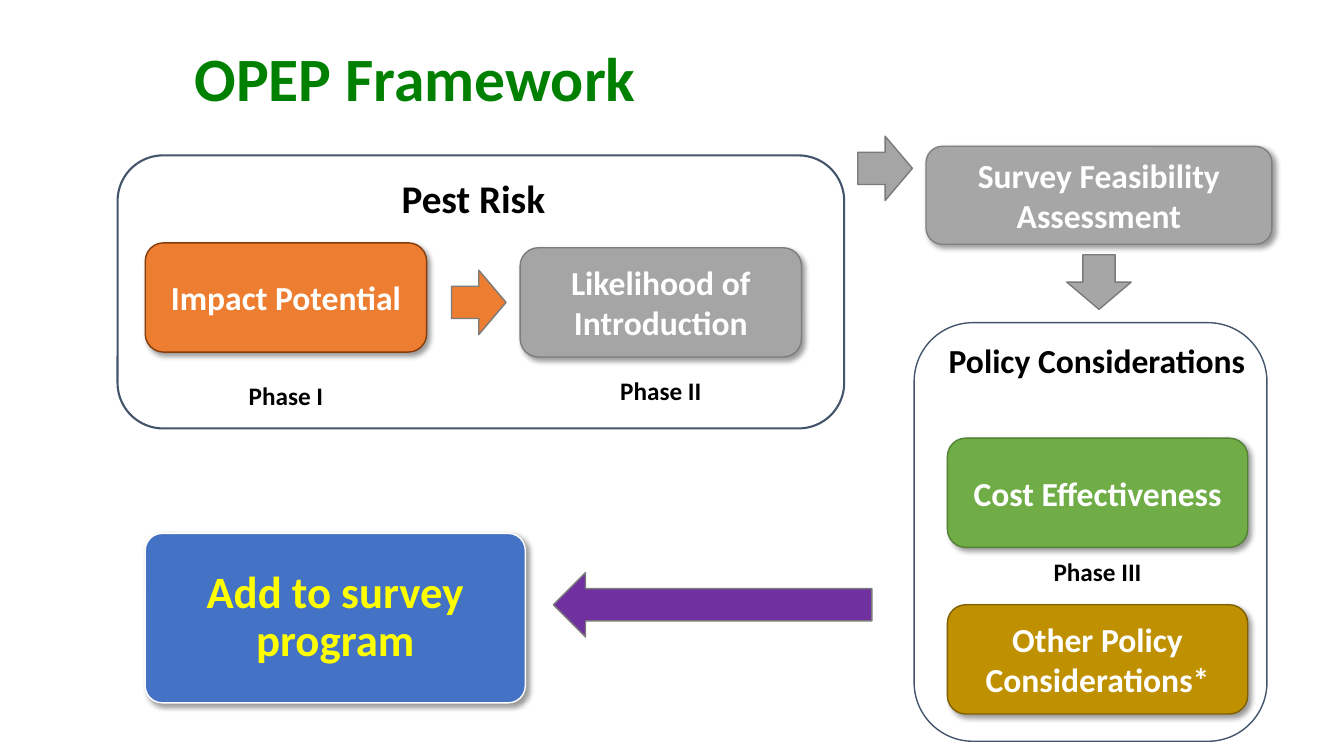
from dataclasses import dataclass

from lxml.etree import SubElement
from pptx import Presentation
from pptx.dml.color import RGBColor
from pptx.enum.shapes import MSO_SHAPE as Shape
from pptx.enum.text import MSO_ANCHOR as Anchor, PP_ALIGN as Align
from pptx.oxml.ns import qn
from pptx.util import Pt


@dataclass(frozen=True)
class Theme:
    font: str = "Calibri"
    title_size: int = 44
    result_size: int = 32
    heading_size: int = 28
    box_size: int = 24
    phase_size: int = 18
    title: str = "008000"
    text: str = "000000"
    light: str = "FFFFFF"
    highlight: str = "FFFF00"
    panel_line: str = "44546A"
    arrow_line: str = "7A7A7A"
    orange: str = "ED7D31"
    orange_line: str = "843C0B"
    gray: str = "A5A5A5"
    gray_line: str = "7C7C7C"
    survey_gray: str = "A6A6A6"
    survey_line: str = "808080"
    green: str = "70AD47"
    green_line: str = "548235"
    gold: str = "BF9000"
    gold_line: str = "806000"
    blue: str = "4472C4"
    purple: str = "7030A0"


THEME = Theme()

TITLE = ("OPEP Framework", (131.75, 13, 684, 90))

# Frame (left, top, width, height), line width
PANELS = [
    ((84, 111, 519, 195), 1.5),
    ((653, 230.5, 252, 299), 1),
]

# Text, frame, size
HEADINGS = [
    ("Pest Risk", (103.75, 121, 468.75, 41), THEME.heading_size),
    ("Policy Considerations", (668, 239, 231, 65.5), THEME.box_size),
]

# Text, frame, fill, line, phase label, gap above the label
BOXES = [
    ("Survey Feasibility\nAssessment", (661.5, 104.5, 247, 70),
     THEME.survey_gray, THEME.survey_line, None, 0),
    ("Impact Potential", (103.75, 173.5, 201, 78),
     THEME.orange, THEME.orange_line, "Phase I", 16.5),
    ("Likelihood of Introduction", (371.5, 177, 201, 78),
     THEME.gray, THEME.gray_line, "Phase II", 9.5),
    ("Cost Effectiveness", (676.75, 313, 214.5, 78),
     THEME.green, THEME.green_line, "Phase III", 3),
    ("Other Policy Considerations*", (676.75, 432, 214.5, 78),
     THEME.gold, THEME.gold_line, None, 0),
]
RESULT = ("Add to survey program", (103.75, 381, 271.5, 121))

# Frame, rotation, fill
ARROWS = [
    ((322.5, 193, 39, 46), 0, THEME.orange),
    ((612.75, 97.25, 39, 46), 0, THEME.gray),
    ((765.5, 178.5, 39, 46), 90, THEME.survey_gray),
    ((395.25, 409, 227.5, 46), 180, THEME.purple),
]

PHASE_WIDTH, PHASE_HEIGHT = 159, 29


def points(frame):
    return [Pt(length) for length in frame]


def write_text(shape, text, size, color, align=Align.CENTER, anchor=Anchor.MIDDLE, spacing=None):
    text_frame = shape.text_frame
    text_frame.word_wrap = True
    text_frame.vertical_anchor = anchor
    text_frame.text = text
    for paragraph in text_frame.paragraphs:
        paragraph.alignment = align
        paragraph.line_spacing = spacing
        for run in paragraph.runs:
            run.font.name = THEME.font
            run.font.size = Pt(size)
            run.font.bold = True
            run.font.color.rgb = RGBColor.from_string(color)


def add_label(slide, text, frame, size):
    label = slide.shapes.add_textbox(*points(frame))
    write_text(label, text, size, THEME.text, anchor=Anchor.TOP)


def add_figure(slide, kind, frame, fill, line, line_width=1):
    """Add a preset shape without shadow; a fill of None leaves it hollow."""
    shape = slide.shapes.add_shape(kind, *points(frame))
    shape.shadow.inherit = False
    if fill is None:
        shape.fill.background()
    else:
        shape.fill.solid()
        shape.fill.fore_color.rgb = RGBColor.from_string(fill)
    shape.line.color.rgb = RGBColor.from_string(line)
    shape.line.width = Pt(line_width)
    return shape


def add_shadow(shape):
    """Cast a soft 40 % black shadow to the lower right."""
    effects = shape.element.spPr.find(qn("a:effectLst"))
    shadow = SubElement(effects, qn("a:outerShdw"), blurRad=str(Pt(4)), dist=str(Pt(3)),
                        dir="2700000", algn="tl", rotWithShape="0")
    color = SubElement(shadow, qn("a:srgbClr"), val=THEME.text)
    SubElement(color, qn("a:alpha"), val="40000")


def add_box(slide, frame, fill, line):
    box = add_figure(slide, Shape.ROUNDED_RECTANGLE, frame, fill, line)
    add_shadow(box)
    return box


def build_slide(presentation):
    slide = presentation.slides.add_slide(presentation.slide_layouts[5])

    text, frame = TITLE
    title = slide.shapes.title
    title.left, title.top, title.width, title.height = points(frame)
    write_text(title, text, THEME.title_size, THEME.title, Align.LEFT, spacing=0.9)

    for frame, line_width in PANELS:
        add_figure(slide, Shape.ROUNDED_RECTANGLE, frame, None, THEME.panel_line, line_width)

    for text, frame, size in HEADINGS:
        add_label(slide, text, frame, size)

    for text, frame, fill, line, phase, gap in BOXES:
        box = add_box(slide, frame, fill, line)
        write_text(box, text, THEME.box_size, THEME.light)
        if phase:
            left, top, width, height = frame
            phase_left = left + (width - PHASE_WIDTH) / 2
            phase_frame = (phase_left, top + height + gap, PHASE_WIDTH, PHASE_HEIGHT)
            add_label(slide, phase, phase_frame, THEME.phase_size)

    text, frame = RESULT
    result = add_box(slide, frame, THEME.blue, THEME.light)
    result.adjustments[0] = 0.1
    write_text(result, text, THEME.result_size, THEME.highlight, spacing=0.9)

    for frame, rotation, fill in ARROWS:
        arrow = add_figure(slide, Shape.RIGHT_ARROW, frame, fill, THEME.arrow_line)
        arrow.rotation = rotation


def main():
    presentation = Presentation()
    presentation.slide_width, presentation.slide_height = Pt(960), Pt(540)
    build_slide(presentation)
    presentation.save("out.pptx")


if __name__ == "__main__":
    main()
